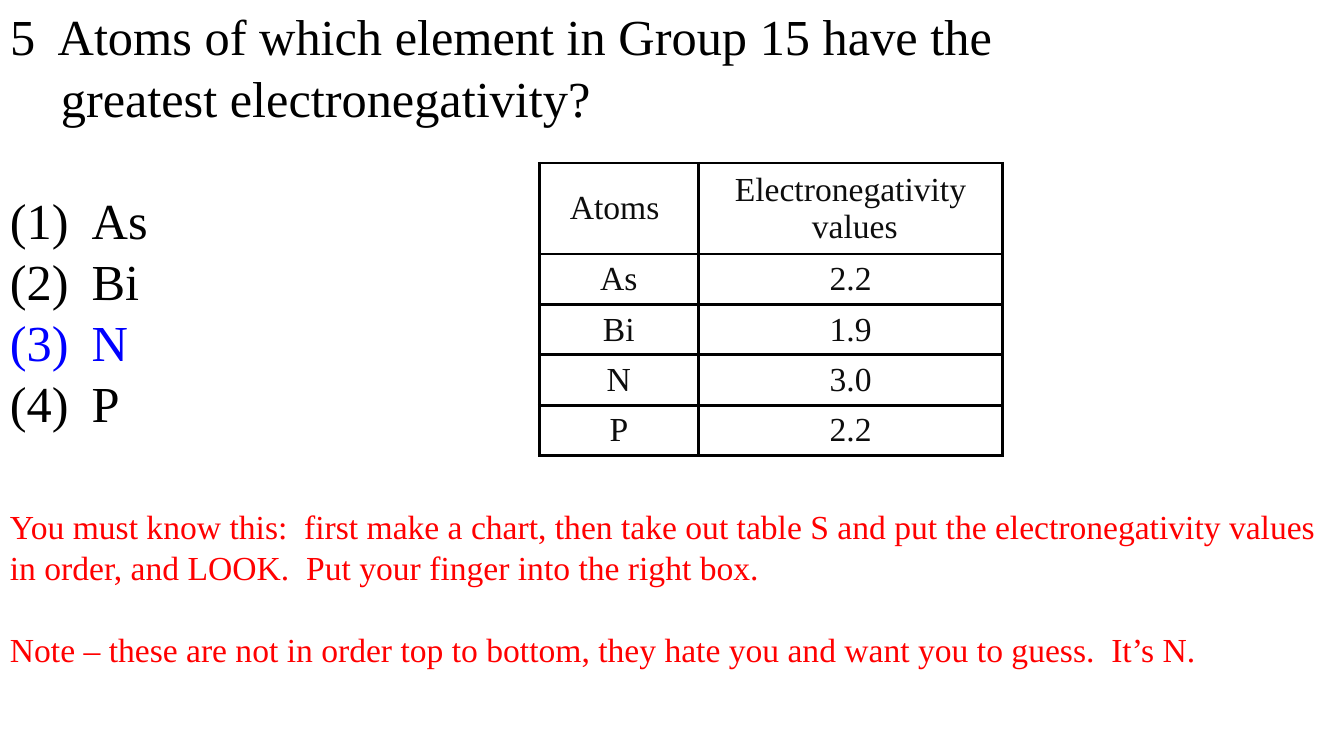
from lxml import etree
from pptx import Presentation
from pptx.dml.color import RGBColor
from pptx.enum.text import MSO_ANCHOR, MSO_AUTO_SIZE, PP_ALIGN
from pptx.oxml.ns import qn
from pptx.util import Cm, Pt

TOP, MIDDLE = MSO_ANCHOR.TOP, MSO_ANCHOR.MIDDLE
LEFT, CENTER = PP_ALIGN.LEFT, PP_ALIGN.CENTER
NO_FIT = MSO_AUTO_SIZE.NONE

BLACK = RGBColor(0x00, 0x00, 0x00)
INK = RGBColor(0x0D, 0x0D, 0x0D)
BLUE = RGBColor(0x00, 0x00, 0xFF)
RED = RGBColor(0xFF, 0x00, 0x00)
FONT = "Times New Roman"
WIDE = Cm(33.87)

QUERY = "5  Atoms of which element in Group 15 have the\vgreatest electronegativity?"
VALUES = [("As", "2.2"), ("Bi", "1.9"), ("N", "3.0"), ("P", "2.2")]
ANSWER = "N"
NOTES = [
    "You must know this:  first make a chart, then take out table S and put the "
    "electronegativity values in order, and LOOK.  Put your finger into the right box.",
    "Note – these are not in order top to bottom, they hate you and want you to "
    "guess.  It’s N.",
]


def style(para, size, color, align=LEFT, pitch=None):
    para.alignment = align
    if pitch:
        para.line_spacing = Pt(pitch)
    font = para.font
    font.name, font.size, font.bold = FONT, Pt(size), False
    font.color.rgb = color


def indent(para, width):
    props = para._p.get_or_add_pPr()
    props.set("marL", str(width))
    props.set("indent", str(-width))
    return props


def fill_lines(frame, lines):
    """Write one paragraph per line and return the paragraphs."""
    frame.word_wrap = True
    frame.text = "\n".join(lines)
    return frame.paragraphs


def add_query(slide, left, top, width, height):
    title = slide.shapes.title
    title.left, title.top, title.width, title.height = left, top, width, height
    frame = title.text_frame
    frame.text = QUERY
    frame.auto_size, frame.vertical_anchor = NO_FIT, TOP
    para = frame.paragraphs[0]
    indent(para, Cm(1.28))
    style(para, 36, BLACK, pitch=43.6)


def add_choices(slide, left, top, width, height):
    box = slide.shapes.add_textbox(left, top, width, height)
    for para in fill_lines(box.text_frame, [atom for atom, _ in VALUES]):
        props = indent(para, Cm(2.06))
        etree.SubElement(props, qn("a:buFont"), typeface="+mj-lt")
        etree.SubElement(props, qn("a:buAutoNum"), type="arabicParenBoth")
        style(para, 36, BLUE if para.text == ANSWER else BLACK, pitch=43.6)


def add_border(cell):
    props = cell._tc.get_or_add_tcPr()
    for side in ("lnL", "lnR", "lnT", "lnB"):
        line = etree.SubElement(props, qn("a:" + side), w=str(Pt(2.25)))
        fill = etree.SubElement(line, qn("a:solidFill"))
        etree.SubElement(fill, qn("a:srgbClr"), val=str(BLACK))


def add_values(slide, left, top, width, height):
    rows = [("Atoms ", "Electronegativity\n values")] + VALUES
    grid = slide.shapes.add_table(len(rows), 2, left, top, width, height).table
    grid.first_row = grid.horz_banding = False
    # The heading takes two lines, the other rows share the rest
    head = Cm(2.29)
    for i, row in enumerate(grid.rows):
        row.height = (height - head) // len(VALUES) if i else head
    first = Cm(4.01)
    grid.columns[0].width, grid.columns[1].width = first, width - first
    for r, row in enumerate(rows):
        for c, text in enumerate(row):
            cell = grid.cell(r, c)
            cell.text = text
            cell.vertical_anchor = MIDDLE
            add_border(cell)
            cell.fill.background()
            for para in cell.text_frame.paragraphs:
                style(para, 24, INK, CENTER)


def add_notes(slide, left, top, width, height):
    box = slide.shapes.add_textbox(left, top, width, height)
    for i, para in enumerate(fill_lines(box.text_frame, NOTES)):
        style(para, 24, RED, pitch=29.2)
        para.space_before = Pt(29.2 if i else 0)


def main():
    deck = Presentation()
    deck.slide_width, deck.slide_height = WIDE, Cm(19.05)
    slide = deck.slides.add_slide(deck.slide_layouts[5])
    # Question and its choices
    add_query(slide, 0, 0, WIDE, Cm(3.4))
    add_choices(slide, 0, Cm(4.62), Cm(12), Cm(6.4))
    # Table of values
    add_values(slide, Cm(13.59), Cm(4.11), Cm(11.68), Cm(7.37))
    # Explanation
    add_notes(slide, 0, Cm(12.62), WIDE, Cm(4.37))
    deck.save("out.pptx")


if __name__ == "__main__":
    main()
